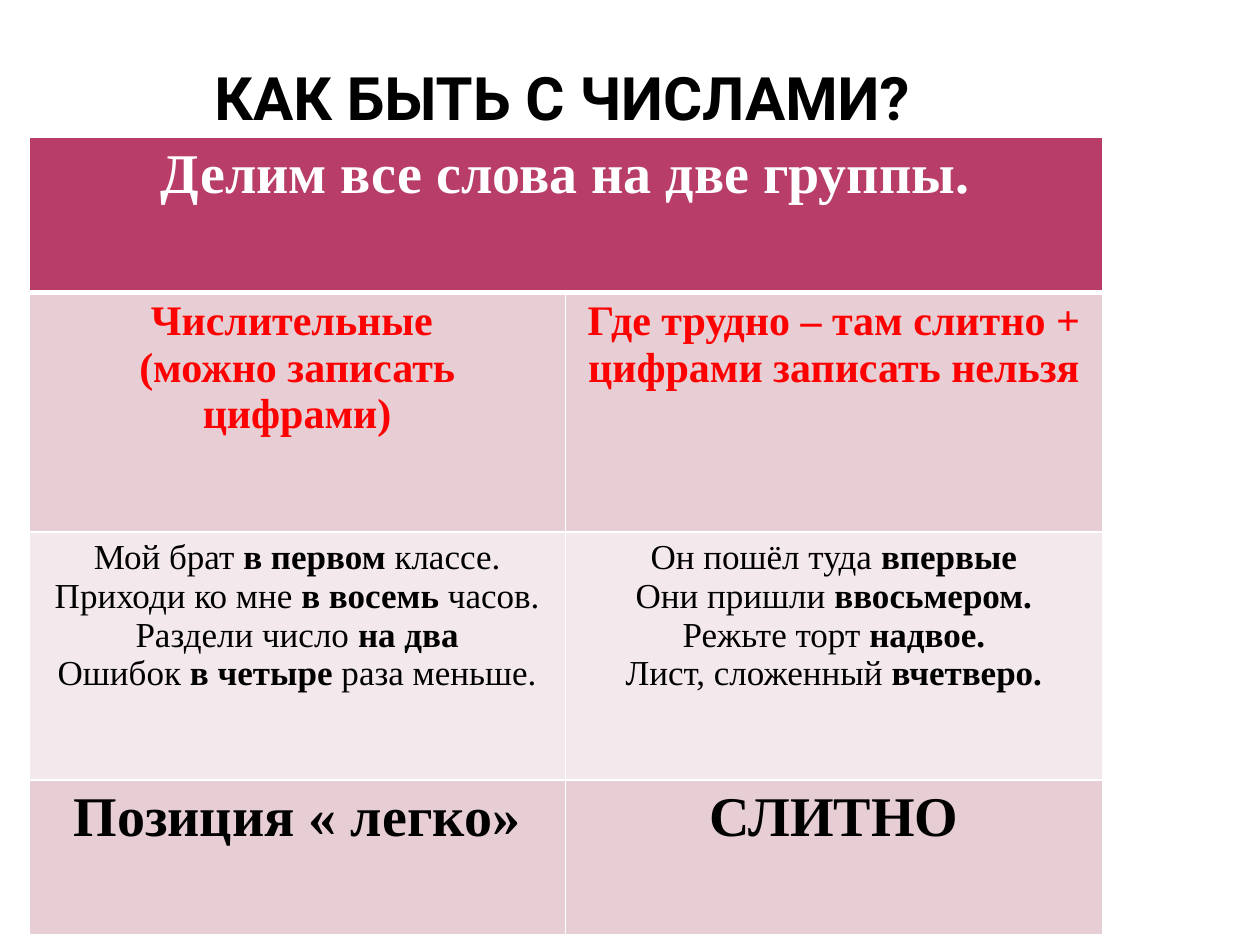
"""Build a slide that sorts number words into two groups."""
import dataclasses
import typing

import lxml.etree
import pptx
import pptx.dml.color
import pptx.enum.text
import pptx.oxml.ns
import pptx.util

Cm = pptx.util.Cm
Pt = pptx.util.Pt


@dataclasses.dataclass(frozen=True)
class Theme:
    head_font: str = "Roboto"
    font: str = "Times New Roman"
    black: str = "000000"
    white: str = "FFFFFF"
    red: str = "FF0000"
    rose: str = "B83D68"
    pink: str = "E6CED4"
    pale: str = "F3E8EB"
    title: float = 34.2
    large: float = 32
    mid: float = 24
    small: float = 20
    thin: float = 1
    thick: float = 3


@dataclasses.dataclass(frozen=True)
class Row:
    height: float
    fill: str
    size: float
    color: str
    cells: list[list[str]]
    bold: bool = True
    top: float = 1
    base: float = 1


THEME = Theme()
ROWS = [
    Row(3.12, THEME.rose, THEME.large, THEME.white,
        [["Делим все слова на две группы."]], base=THEME.thick),
    Row(4.83, THEME.pink, THEME.mid, THEME.red, [
        ["Числительные ", "(можно записать цифрами)"],
        ["Где трудно – там слитно +", "цифрами записать нельзя"],
    ], top=THEME.thick),
    Row(5, THEME.pale, THEME.small, THEME.black, [
        ["Мой брат *в первом *классе.", "Приходи ко мне *в восемь *часов.",
         "Раздели число *на два", "Ошибок *в четыре *раза меньше."],
        ["Он пошёл туда *впервые", "Они пришли *ввосьмером.",
         "Режьте торт *надвое.", "Лист, сложенный *вчетверо."],
    ], bold=False),
    Row(3.12, THEME.pink, THEME.large, THEME.black,
        [["Позиция « легко»"], ["СЛИТНО"]]),
]


def tint(code: str) -> pptx.dml.color.RGBColor:
    """Turn a hex code into a colour."""
    return pptx.dml.color.RGBColor.from_string(code)


def write(frame: typing.Any, lines: list[str], *, size: float, color: str,
          font: str = THEME.font, bold: bool = True) -> None:
    """Write centred lines, where each star flips the weight."""
    for index, line in enumerate(lines):
        para = frame.paragraphs[0] if index == 0 else frame.add_paragraph()
        para.alignment = pptx.enum.text.PP_ALIGN.CENTER
        for turn, part in enumerate(line.split("*")):
            run = para.add_run()
            run.text = part
            run.font.name = font
            run.font.size = Pt(size)
            run.font.bold = bold != (turn % 2 == 1)
            run.font.color.rgb = tint(color)


def edge(cell: typing.Any, top: float, base: float) -> None:
    """Draw the white borders of a cell."""
    props = cell._tc.get_or_add_tcPr()
    qn = pptx.oxml.ns.qn
    sides = {"L": THEME.thin, "R": THEME.thin, "T": top, "B": base}
    for side, width in sides.items():
        line = lxml.etree.SubElement(props, qn(f"a:ln{side}"), w=str(Pt(width)))
        fill = lxml.etree.SubElement(line, qn("a:solidFill"))
        lxml.etree.SubElement(fill, qn("a:srgbClr"), val=THEME.white)


def draw_title(slide: typing.Any) -> None:
    """Place the title above the table."""
    box = slide.shapes.add_textbox(Cm(1.27), Cm(0.89), Cm(20.12), Cm(3.18))
    frame = box.text_frame
    frame.word_wrap = True
    frame.margin_left = frame.margin_right = Cm(0.13)
    frame.margin_top, frame.margin_bottom = Cm(0.34), 0
    write(frame, ["КАК БЫТЬ С ЧИСЛАМИ?"], size=THEME.title,
          color=THEME.black, font=THEME.head_font)


def draw_table(slide: typing.Any, rows: list[Row]) -> None:
    """Place the table with its merged head row."""
    height = sum(row.height for row in rows)
    table = slide.shapes.add_table(
        len(rows), 2, Cm(0.58), Cm(2.77), Cm(21.64), Cm(height)).table
    table.horz_banding = False
    for index, row in enumerate(rows):
        table.rows[index].height = Cm(row.height)
        for cell in table.rows[index].cells:
            edge(cell, row.top, row.base)
            cell.fill.solid()
            cell.fill.fore_color.rgb = tint(row.fill)
        for column, lines in enumerate(row.cells):
            write(table.cell(index, column).text_frame, lines,
                  size=row.size, color=row.color, bold=row.bold)
    table.cell(0, 0).merge(table.cell(0, 1))


def main() -> None:
    """Build and save the deck."""
    deck = pptx.Presentation()
    deck.slide_width, deck.slide_height = Cm(25.4), Cm(19.05)
    slide = deck.slides.add_slide(deck.slide_layouts[6])
    draw_title(slide)
    draw_table(slide, ROWS)
    deck.save("out.pptx")


if __name__ == "__main__":
    main()
